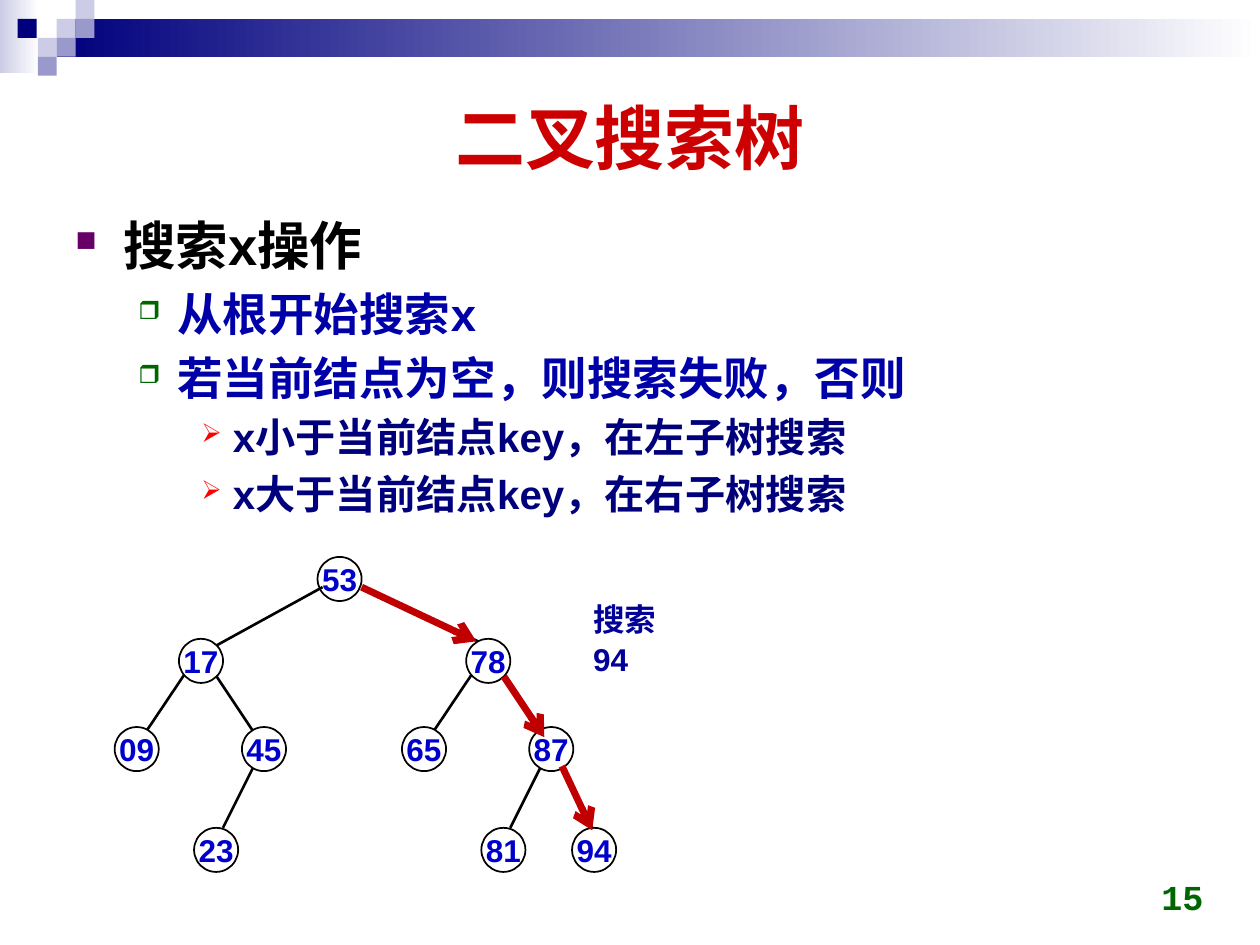
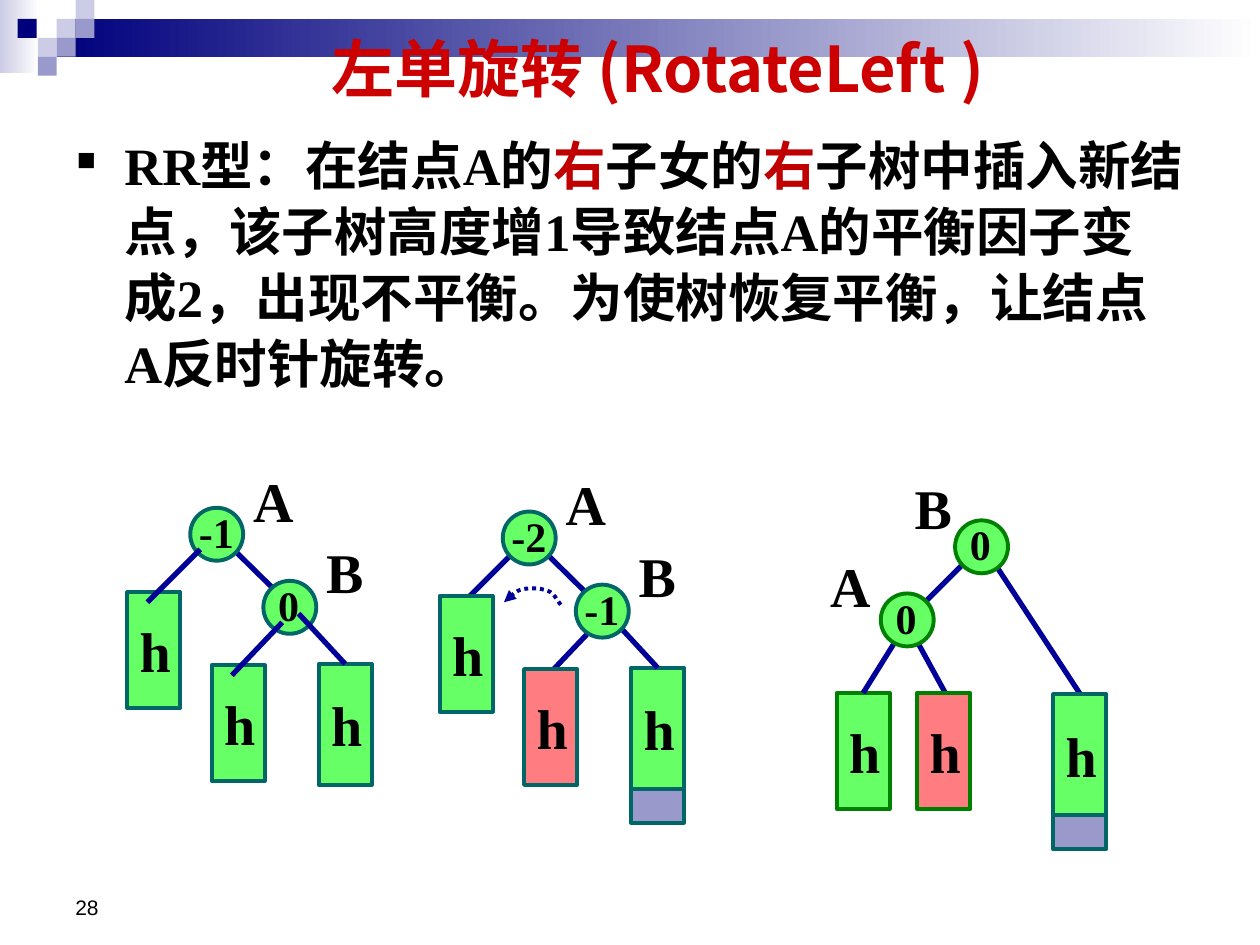
from lxml.etree import SubElement
from pptx import Presentation
from pptx.dml.color import RGBColor
from pptx.enum.dml import MSO_LINE_DASH_STYLE as Dash
from pptx.enum.shapes import MSO_CONNECTOR_TYPE as Connector, MSO_SHAPE as Shape
from pptx.enum.text import MSO_ANCHOR as Anchor, MSO_AUTO_SIZE as Fit, PP_ALIGN as Align
from pptx.oxml.ns import qn
from pptx.util import Pt

PX = 9144
COLORS = dict(
    white="FFFFFF", black="000000", navy="00007D", lilac="CCCCE6", violet="9999CC",
    title="CC0000", red="C00000", arrow="FF0000", plum="660066", page="006600",
    point="0000A8", key="0000CC", ink="000099", teal="006666", green="008000",
    leaf="66FF66", pink="FF7C80",
)
CJK = "Noto Sans CJK JP"
STYLES = dict(
    search_title=("Arial", 40, "title", True),
    rotate_title=(CJK, 36, "title", True),
    topic=("Arial", 30, "black", True),
    point=("Arial", 26, "point", True),
    case=("Arial", 23, "navy", True),
    prose=("Times New Roman", 30, "black", True),
    key=("Arial", 18, "key", True),
    target=("Arial", 18, "ink", True),
    name=("Times New Roman", 32, "black", True),
    balance=("Times New Roman", 24, "black", True),
    search_page=("Courier New", 20, "page", True),
    rotate_page=("Arial", 12, "black", False),
)
BULLETS = dict(
    topic=("■", "plum", 55, 38, 38, 0.15),
    point=("❒", "page", 55, 81, 31, 0.15),
    case=("➢", "arrow", 65, 125, 25, 0.15),
    prose=("■", "black", 50, 38, 38, 0.10),
)
LINE_HEIGHT = 1.257

FADES = [((0, 0, 31, 58), "lilac"), ((45, 15, 955, 30), "navy")]
TILE = 15
TILES = [
    (45, 15, "lilac"), (60, 0, "lilac"), (60, 15, "violet"), (30, 30, "lilac"),
    (14, 15, "navy"), (45, 30, "violet"), (30, 45, "violet"),
]

SEARCH_POINTS = [
    ("topic", [("搜索x操作", None)]),
    ("point", [("从根开始搜索x", None)]),
    ("point", [("若当前结点为空，则搜索失败，否则", None)]),
    ("case", [("x小于当前结点key，在左子树搜索", None)]),
    ("case", [("x大于当前结点key，在右子树搜索", None)]),
]
KEY_SIZE = 35
ROOT = ("53", 252, 442)
ROOT_EDGES = [(256, 466, 165, 516), (287, 467, 397, 517)]
BRANCH_KEYS = [(142, 507), (91, 577), (192, 577), (154, 657)]
BRANCH_EDGES = [(154, 524, 107, 594), (172, 537, 202, 582), (202, 607, 177, 657)]
BRANCHES = [(0, ["17", "09", "45", "23"]), (228, ["78", "65", "87", "81"])]
LAST_KEY = ("94", 454, 657)
LAST_EDGE = (445, 607, 470, 657)
SEARCH_ROUTE = [(287, 466, 378, 509), (400, 537, 432, 585), (446, 608, 470, 659)]

ROTATE_POINTS = [("prose", [
    ("RR型：在结点A的", None), ("右", "red"), ("子女的", None), ("右", "red"),
    ("子树中插入新结点，该子树高度增1导致结点A的平衡因子变成2，"
     "出现不平衡。为使树恢复平衡，让结点A反时针旋转。", None),
])]
KNOT_SIZE = 42
NEW_NODE_HEIGHT = 27
UNROTATED = dict(
    names=[("A", 191, 365), ("B", 249, 422)],
    knots=[(151, 403), (209, 461)],
    stem=(169, 420, 233, 483),
    edges=[((159, 436), (117, 478)), ((224, 494), (184, 536)), ((237, 487), None)],
    subtrees=[(101, 470, 92), (168, 528, 92), (253, 527, 96)],
)
ROTATED = dict(
    names=[("A", 649, 433), ("B", 716, 371)],
    knots=[(699, 471), (758, 413)],
    stem=(766, 446, 724, 488),
    edges=[((715, 502), None), ((724, 502), (753, 555)), ((784, 439), (860, 555))],
    subtrees=[(664, 550, 92), (728, 550, 92), (836, 551, 96)],
)
TREES = [
    dict(layout=UNROTATED, shift=(0, 0), balances=["-1", "0"], outline="teal",
         fills=["leaf", "leaf", "leaf"], inserted=False, edges_on_top=True),
    dict(layout=UNROTATED, shift=(248, 3), balances=["-2", "-1"], outline="teal",
         fills=["leaf", "pink", "leaf"], inserted=True, edges_on_top=False),
    dict(layout=ROTATED, shift=(0, 0), balances=["0", "0"], outline="green",
         fills=["leaf", "pink", "leaf"], inserted=True, edges_on_top=False),
]
TURN = [(445, 480), (442, 476), (440, 472), (437, 470), (433, 468), (428, 467),
        (424, 467), (420, 467), (415, 467), (411, 469), (407, 471), (402, 477), (400, 478)]


def rgb(color):
    return RGBColor.from_string(COLORS[color])


def emu(*lengths):
    return [round(length * PX) for length in lengths]


def add_run(paragraph, text, style, color=None):
    font, size, ink, bold = STYLES[style]
    run = paragraph.add_run()
    run.text = text
    run.font.name, run.font.size, run.font.bold = font, Pt(size), bold
    run.font.color.rgb = rgb(color or ink)
    SubElement(run.font._element, qn("a:ea"), typeface=CJK)


def add_bullet(paragraph, style):
    mark, color, percent, left, hang, gap = BULLETS[style]
    size = STYLES[style][1]
    paragraph.line_spacing = Pt(size * LINE_HEIGHT)
    paragraph.space_before = Pt(size * gap)
    props = paragraph._p.get_or_add_pPr()
    props.set("marL", str(left * PX))
    props.set("indent", str(-hang * PX))
    SubElement(SubElement(props, qn("a:buClr")), qn("a:srgbClr"), val=COLORS[color])
    SubElement(props, qn("a:buSzPct"), val=str(percent * 1000))
    SubElement(props, qn("a:buChar"), char=mark)


def add_label(slide, text, style, box, align=Align.LEFT, anchor=Anchor.TOP, wrap=True):
    frame = slide.shapes.add_textbox(*emu(*box)).text_frame
    frame.word_wrap, frame.vertical_anchor = wrap, anchor
    if not wrap:
        frame.auto_size = Fit.SHAPE_TO_FIT_TEXT
    paragraph = frame.paragraphs[0]
    paragraph.alignment = align
    add_run(paragraph, text, style)
    return paragraph


def add_points(slide, points, box):
    frame = slide.shapes.add_textbox(*emu(*box)).text_frame
    frame.word_wrap = True
    for index, (style, runs) in enumerate(points):
        paragraph = frame.add_paragraph() if index else frame.paragraphs[0]
        add_bullet(paragraph, style)
        for text, color in runs:
            add_run(paragraph, text, style, color)


def add_block(slide, kind, box, fill, outline=None, width=2.25):
    block = slide.shapes.add_shape(kind, *emu(*box))
    block.shadow.inherit = False
    block.fill.solid()
    block.fill.fore_color.rgb = rgb(fill)
    if outline:
        block.line.color.rgb, block.line.width = rgb(outline), Pt(width)
    else:
        block.line.fill.background()
    return block


def write_in(block, text, style, align):
    frame = block.text_frame
    frame.word_wrap, frame.vertical_anchor = False, Anchor.MIDDLE
    frame.paragraphs[0].alignment = align
    add_run(frame.paragraphs[0], text, style)


def add_head(line, head):
    SubElement(line._get_or_add_ln(), qn("a:tailEnd"), type=head)


def add_edge(slide, ends, color, width, head=None):
    edge = slide.shapes.add_connector(Connector.STRAIGHT, *emu(*ends))
    edge.line.color.rgb, edge.line.width = rgb(color), Pt(width)
    if head:
        add_head(edge.line, head)
    SubElement(edge._element.spPr, qn("a:effectLst"))
    return edge


def start_slide(deck):
    slide = deck.slides.add_slide(deck.slide_layouts[6])
    for box, color in FADES:
        band = add_block(slide, Shape.RECTANGLE, box, color)
        band.fill.gradient()
        band.fill.gradient_angle = 0
        for stop, shade in zip(band.fill.gradient_stops, (color, "white")):
            stop.color.rgb = rgb(shade)
    for x, y, color in TILES:
        add_block(slide, Shape.RECTANGLE, (x, y, TILE, TILE), color)
    return slide


def add_key(slide, text, x, y):
    node = add_block(slide, Shape.OVAL, (x, y, KEY_SIZE, KEY_SIZE), "white", "black", 1)
    write_in(node, text, "key", Align.CENTER)
    frame = node.text_frame
    frame.margin_left = frame.margin_right = frame.margin_top = frame.margin_bottom = 0


def build_search(deck):
    slide = start_slide(deck)
    add_label(slide, "二叉搜索树", "search_title", (50, 50, 900, 116), Align.CENTER, Anchor.MIDDLE)
    add_points(slide, SEARCH_POINTS, (50, 162, 900, 520))
    add_label(slide, "15", "search_page", (732, 683, 233, 50), Align.RIGHT, Anchor.BOTTOM)
    add_key(slide, *ROOT)
    for ends in ROOT_EDGES + [LAST_EDGE]:
        add_edge(slide, ends, "black", 1.5)
    for shift, keys in BRANCHES:
        for x1, y1, x2, y2 in BRANCH_EDGES:
            add_edge(slide, (x1 + shift, y1, x2 + shift, y2), "black", 1.5)
        for key, (x, y) in zip(keys, BRANCH_KEYS):
            add_key(slide, key, x + shift, y)
    add_key(slide, *LAST_KEY)
    for ends in SEARCH_ROUTE:
        add_edge(slide, ends, "red", 4, "arrow")
    target = add_label(slide, "搜索94", "target", (461, 470, 97, 70))
    target.line_spacing = Pt(STYLES["target"][1] * LINE_HEIGHT)


def add_tree(slide, tree):
    layout, (dx, dy), outline = tree["layout"], tree["shift"], tree["outline"]

    def add_free_edges():
        for start, end in layout["edges"]:
            if end:
                (x1, y1), (x2, y2) = start, end
                add_edge(slide, (x1 + dx, y1 + dy, x2 + dx, y2 + dy), "ink", 3)

    def add_joined_edges():
        for (start, end), subtree in zip(layout["edges"], subtrees):
            if end is None:
                x, y = start
                edge = add_edge(slide, (x + dx, y + dy, x + dx, y + dy), "ink", 3)
                edge.end_connect(subtree, 0)

    x1, y1, x2, y2 = layout["stem"]
    add_edge(slide, (x1 + dx, y1 + dy, x2 + dx, y2 + dy), "ink", 3)
    if not tree["edges_on_top"]:
        add_free_edges()
    subtrees = []
    for (x, y, height), fill in zip(layout["subtrees"], tree["fills"]):
        border = "teal" if height > 92 else outline
        box = (x + dx, y + dy, KNOT_SIZE, height)
        subtrees.append(add_block(slide, Shape.RECTANGLE, box, fill, border))
        write_in(subtrees[-1], "h", "name", Align.LEFT)
    if tree["inserted"]:
        box = (x + dx, y + dy + height, KNOT_SIZE, NEW_NODE_HEIGHT)
        add_block(slide, Shape.RECTANGLE, box, "violet", "teal")
    if not tree["edges_on_top"]:
        add_joined_edges()
    for x, y in layout["knots"]:
        add_block(slide, Shape.OVAL, (x + dx, y + dy, KNOT_SIZE, KNOT_SIZE), "leaf", outline)
    if tree["edges_on_top"]:
        add_free_edges()
        add_joined_edges()
    for balance, (x, y) in zip(tree["balances"], layout["knots"]):
        width = 48 if len(balance) > 1 else 37
        left = x + dx + (KNOT_SIZE - width) // 2
        add_label(slide, balance, "balance", (left, y + dy - 6, width, 50), wrap=False)
    for name, x, y in layout["names"]:
        add_label(slide, name, "name", (x + dx, y + dy, 51, 63), wrap=False)


def bezier_points(controls, steps=8):
    points = [controls[0]]
    for first in range(0, len(controls) - 1, 3):
        a, b, c, d = controls[first:first + 4]
        for step in range(1, steps + 1):
            t = step / steps
            weights = ((1 - t) ** 3, 3 * t * (1 - t) ** 2, 3 * t * t * (1 - t), t ** 3)
            points.append(tuple(sum(w * p[axis] for w, p in zip(weights, (a, b, c, d)))
                                for axis in (0, 1)))
    return points


def add_turn(slide):
    start, *rest = [emu(*point) for point in bezier_points(TURN)]
    builder = slide.shapes.build_freeform(*start)
    builder.add_line_segments(rest, close=False)
    turn = builder.convert_to_shape()
    turn.shadow.inherit = False
    turn.fill.background()
    turn.line.color.rgb, turn.line.width = rgb("ink"), Pt(2.25)
    turn.line.dash_style = Dash.ROUND_DOT
    add_head(turn.line, "triangle")


def build_rotation(deck):
    slide = start_slide(deck)
    add_label(slide, "左单旋转 (RotateLeft )", "rotate_title", (209, 20, 626, 67),
              Align.CENTER, Anchor.MIDDLE)
    add_points(slide, ROTATE_POINTS, (51, 98, 900, 291))
    add_label(slide, "28", "rotate_page", (50, 683, 233, 52), anchor=Anchor.BOTTOM)
    for tree in TREES:
        add_tree(slide, tree)
    add_turn(slide)


def main():
    deck = Presentation()
    deck.slide_width, deck.slide_height = emu(1000, 750)
    build_search(deck)
    build_rotation(deck)
    deck.save("out.pptx")


if __name__ == "__main__":
    main()
